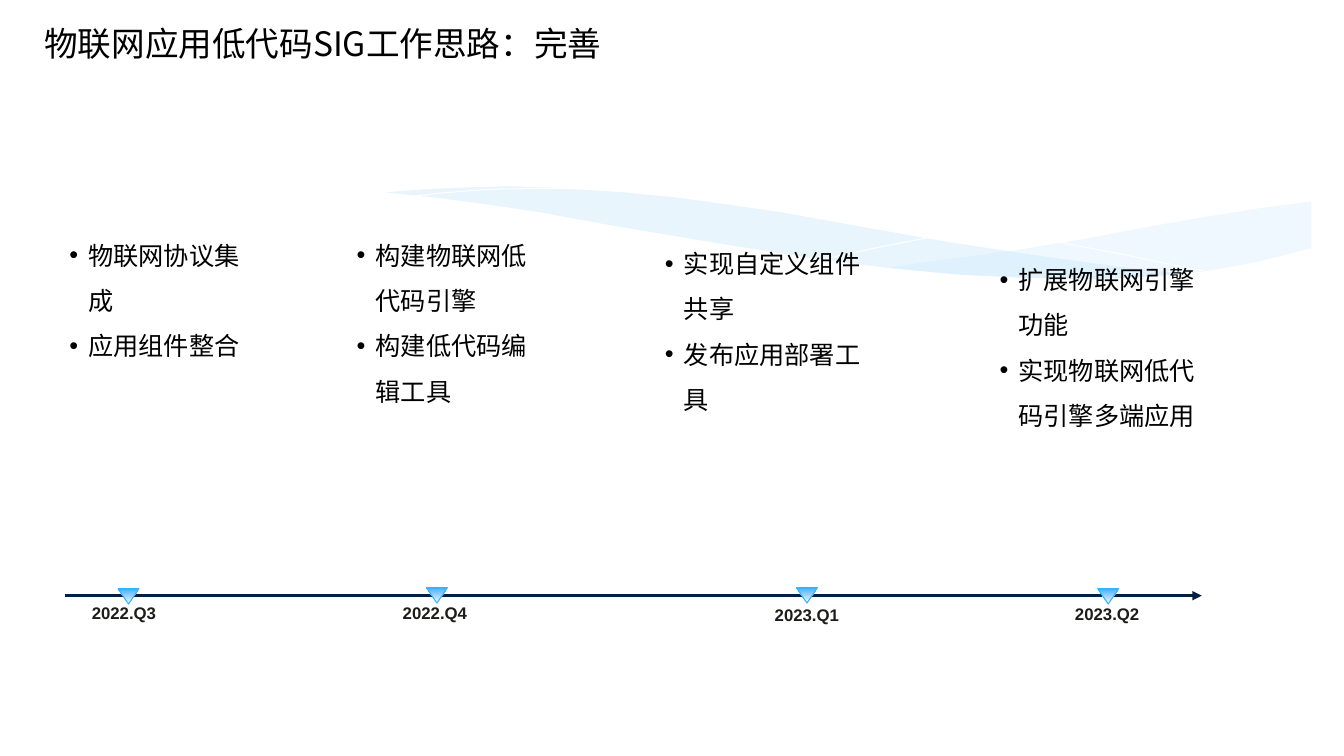
"""Build a one-slide quarterly roadmap with a timeline and soft waves."""
from copy import deepcopy
from lxml import etree
from pptx import Presentation
from pptx.dml.color import RGBColor
from pptx.enum.shapes import MSO_CONNECTOR, MSO_SHAPE
from pptx.enum.text import MSO_ANCHOR, MSO_AUTO_SIZE, PP_ALIGN
from pptx.oxml.ns import qn
from pptx.util import Pt

LINE = MSO_CONNECTOR.STRAIGHT
MARK = MSO_SHAPE.ISOSCELES_TRIANGLE
TOP, MID = MSO_ANCHOR.TOP, MSO_ANCHOR.MIDDLE
FIXED = MSO_AUTO_SIZE.NONE
LEFT, CENTER = PP_ALIGN.LEFT, PP_ALIGN.CENTER

BLACK = RGBColor(0x00, 0x00, 0x00)
WHITE = RGBColor(0xFF, 0xFF, 0xFF)
NAVY = RGBColor(0x04, 0x1F, 0x44)
INK = RGBColor(0x1D, 0x1D, 0x1A)
EDGE = RGBColor(0x31, 0xB6, 0xFD)
WAVE = RGBColor(0xC6, 0xE7, 0xFC)
STOPS = [(0, WHITE), (0.44, RGBColor(0xAC, 0xD7, 0xFF)),
         (1, RGBColor(0x42, 0xB0, 0xFD))]
HAN, LATIN = "Noto Sans CJK SC", "Arial"

RIGHT = [(936, 144), (898, 149), (855, 156), (826, 161), (773, 171),
         (724, 179), (678, 185), (635, 191), (663, 194), (703, 198),
         (738, 199.5), (771, 200), (801, 199.5), (828, 198), (853, 195),
         (877, 191), (898, 187), (924, 181), (936.7, 178), (936.7, 144)]
BAND = [(857, 196.6), (803, 191), (744, 183), (678, 173), (604, 160),
        (560, 152), (519, 146), (482, 141), (446, 137.5), (403, 134.6),
        (364, 133), (330, 134), (301, 135.4), (275, 137.5), (310, 141),
        (348, 146), (388, 152), (431, 160), (508, 173), (577, 184),
        (639, 192), (694, 197), (743, 199.6), (785, 200), (823, 199)]
CREST = [(297, 140), (315, 138), (338, 136), (359, 135), (400, 134.6),
         (432, 135.4), (469, 137), (511, 140), (558, 144), (611, 150),
         (667, 158), (730, 168), (798, 181), (871, 196)]
RISE = [(589, 185), (626, 177), (667, 169), (718, 161), (774, 151),
        (832, 143), (873, 138), (912, 134.6), (936, 133)]
COVER = [(938, 177), (911, 184), (883, 191), (852, 195), (816, 198),
         (776, 199.4), (731, 198.4), (680, 196), (622, 191), (556, 183),
         (483, 172), (429, 163), (402, 158), (350, 149), (303, 142),
         (260, 137), (220, 133.9), (186, 132.5), (154, 132.5), (127, 134),
         (102, 136), (81, 139), (64, 142), (50, 145), (39, 148), (27, 151),
         (22, 153), (22, 237), (938, 237)]
WAVES = [(RIGHT, WAVE, 29), (BAND, WAVE, 40), (CREST, None, 100),
         (RISE, None, 100), (COVER, WHITE, 100)]

LISTS = [((39.6, 154, 147, 110), ["物联网协议集成", "应用组件整合"]),
         ((244.8, 154, 157, 145), ["构建物联网低代码引擎", "构建低代码编辑工具"]),
         ((465, 160, 175, 145), ["实现自定义组件共享", "发布应用部署工具"]),
         ((704, 171.4, 175, 145), ["扩展物联网引擎功能", "实现物联网低代码引擎多端应用"])]
DATES = [("2022.Q3", 88.6, 427, 91.8, 420.5),
         ("2022.Q4", 310.7, 427, 312.1, 419.8),
         ("2023.Q1", 576.4, 428.4, 576.4, 419.8),
         ("2023.Q2", 790.9, 427.7, 791.6, 420.5)]


def place(shape, box):
    """Move a shape to a box given in points."""
    shape.left, shape.top, shape.width, shape.height = map(Pt, box)


def write(para, text, size, font, color, bold=False):
    """Add one formatted run to a paragraph."""
    run = para.add_run()
    run.text = text
    run.font.size, run.font.name, run.font.bold = Pt(size), font, bold
    run.font.color.rgb = color
    etree.SubElement(run.font._element, qn("a:ea"), typeface=font)


def wave(slide, first, points, color, alpha):
    """Draw one wave, or a white hairline, behind the first shape."""
    spots = [(Pt(x), Pt(y)) for x, y in points]
    pen = slide.shapes.build_freeform(*spots[0], scale=1.0)
    pen.add_line_segments(spots[1:], close=color is not None)
    shape = pen.convert_to_shape()
    shape.shadow.inherit = False
    if color is None:
        shape.fill.background()
        shape.line.color.rgb = WHITE
        shape.line.width = Pt(0)
    else:
        shape.fill.solid()
        shape.fill.fore_color.rgb = color
        shape.line.fill.background()
        if alpha < 100:
            tint = shape._element.spPr.find(".//" + qn("a:srgbClr"))
            etree.SubElement(tint, qn("a:alpha"), val=str(alpha * 1000))
    first._element.addprevious(shape._element)


def head(shape, text):
    """Fill the title placeholder."""
    place(shape, (24.5, 13, 911.5, 36))
    frame = shape.text_frame
    frame.auto_size, frame.vertical_anchor = FIXED, MID
    para = frame.paragraphs[0]
    para.alignment = LEFT
    write(para, text, 24, HAN, BLACK)


def goals(shape, box, items):
    """Fill a body placeholder with a bulleted list."""
    place(shape, box)
    frame = shape.text_frame
    frame.auto_size, frame.vertical_anchor = FIXED, TOP
    frame.margin_left = frame.margin_right = Pt(10)
    frame.margin_top = frame.margin_bottom = Pt(6.6)
    for i, item in enumerate(items):
        para = frame.add_paragraph() if i else frame.paragraphs[0]
        para.line_spacing, para.space_before = 1.5, Pt(0)
        props = para._p.get_or_add_pPr()
        props.set("marL", str(Pt(13.5)))
        props.set("indent", str(-Pt(13.5)))
        etree.SubElement(props, qn("a:buFont"), typeface=LATIN)
        etree.SubElement(props, qn("a:buChar"), char="•")
        write(para, item, 18, HAN, BLACK)


def axis(slide):
    """Draw the timeline arrow."""
    line = slide.shapes.add_connector(LINE, Pt(46.4), Pt(425.5), Pt(858.4), Pt(425.5))
    line.line.color.rgb = NAVY
    line.line.width = Pt(2.25)
    etree.SubElement(line.line._get_or_add_ln(), qn("a:tailEnd"), type="triangle")
    etree.SubElement(line._element.spPr, qn("a:effectLst"))


def label(slide, text, mid, top):
    """Add a date centred below the timeline."""
    box = slide.shapes.add_textbox(Pt(mid - 38.5), Pt(top), Pt(77), Pt(21.8))
    box.text_frame.word_wrap = True
    para = box.text_frame.paragraphs[0]
    para.alignment = CENTER
    write(para, text, 12, LATIN, INK, True)


def mark(slide, mid, top):
    """Add a downward gradient triangle on the timeline."""
    shape = slide.shapes.add_shape(MARK, Pt(mid - 7.5), Pt(top), Pt(15), Pt(11))
    shape.shadow.inherit = False
    shape.line.color.rgb = EDGE
    shape.line.width = Pt(0.75)
    props = shape._element.spPr
    props.find(qn("a:xfrm")).set("flipV", "1")
    shape.fill.gradient()
    shape.fill.gradient_angle = 270
    ramp = props.find(".//" + qn("a:gsLst"))
    ramp.append(deepcopy(ramp[0]))
    for stop, (pos, color) in zip(shape.fill.gradient_stops, STOPS):
        stop.position = pos
        stop.color.rgb = color


def main():
    """Build and save the slide."""
    deck = Presentation()
    deck.slide_width, deck.slide_height = Pt(960), Pt(540)
    slide = deck.slides.add_slide(deck.slide_layouts[4])
    title, *bodies = slide.placeholders
    head(title, "物联网应用低代码SIG工作思路：完善")
    for body, (box, items) in zip(bodies, LISTS):
        goals(body, box, items)
    for points, color, alpha in WAVES:
        wave(slide, title, points, color, alpha)
    axis(slide)
    for text, mid, top, spot, peak in DATES:
        label(slide, text, mid, top)
        mark(slide, spot, peak)
    deck.save("out.pptx")


if __name__ == "__main__":
    main()
